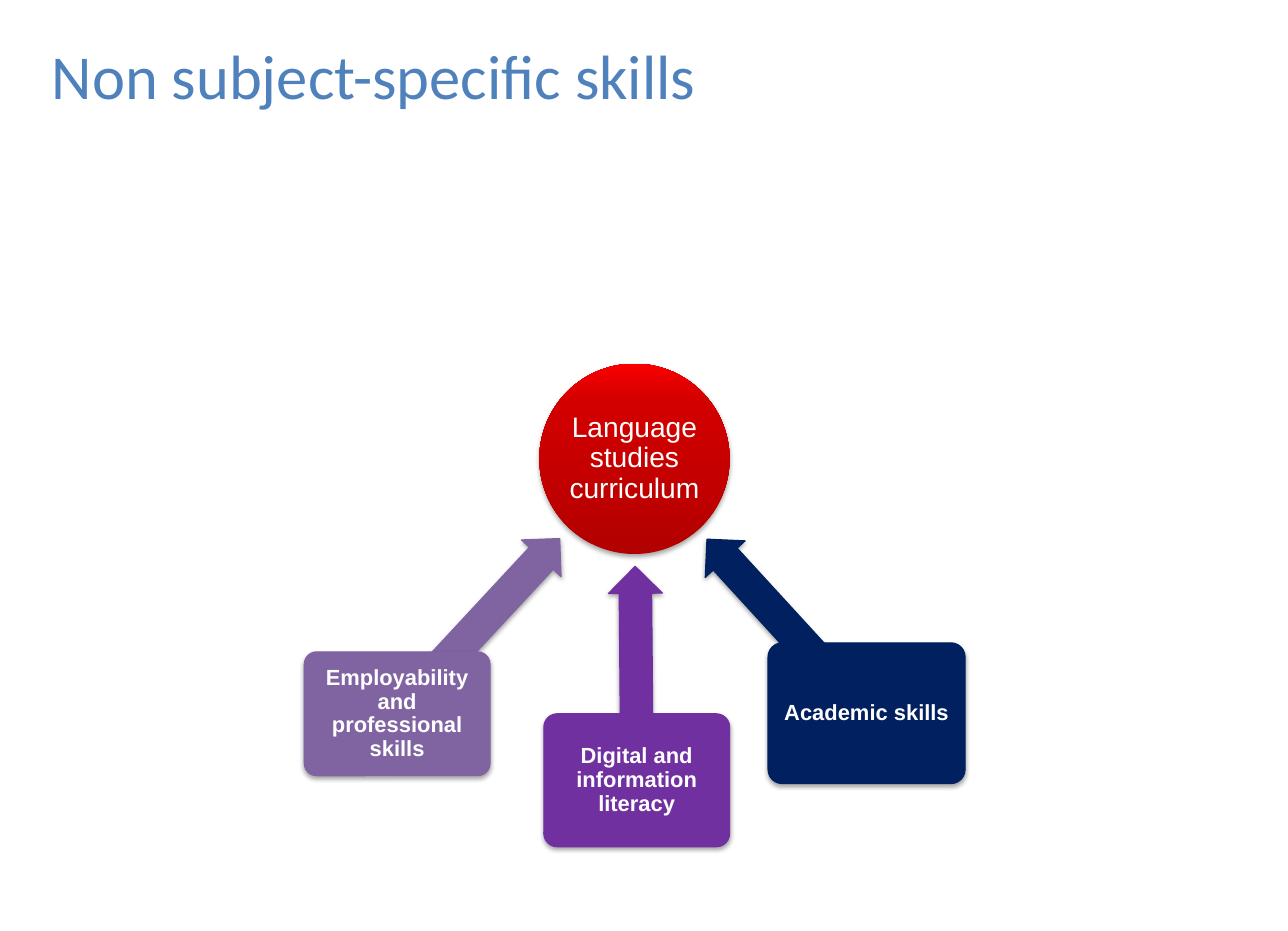
"""Build a slide showing three skill areas that feed the language studies curriculum."""
import copy

import lxml.etree
import pptx
import pptx.dml.color
import pptx.enum.shapes
import pptx.enum.text
import pptx.oxml
import pptx.oxml.ns
import pptx.util

Pt = pptx.util.Pt
RGBColor = pptx.dml.color.RGBColor
SHAPE = pptx.enum.shapes.MSO_SHAPE
ALIGN = pptx.enum.text.PP_ALIGN
MIDDLE = pptx.enum.text.MSO_ANCHOR.MIDDLE
qn = pptx.oxml.ns.qn

TITLE_BLUE = RGBColor(0x4F, 0x81, 0xBD)
WHITE = RGBColor(0xFF, 0xFF, 0xFF)
DARK_RED = RGBColor(0xB3, 0x00, 0x00)
MID_RED = RGBColor(0xD3, 0x00, 0x00)
BRIGHT_RED = RGBColor(0xF8, 0x00, 0x00)
PURPLE = RGBColor(0x70, 0x30, 0xA0)
LILAC = RGBColor(0x80, 0x64, 0xA2)
NAVY = RGBColor(0x00, 0x20, 0x60)

SHADOW = (
    f'<a:outerShdw {pptx.oxml.ns.nsdecls("a")} blurRad="{Pt(3.1)}" dist="{Pt(1.8)}" '
    'dir="5400000" rotWithShape="0"><a:srgbClr val="000000">'
    '<a:alpha val="35000"/></a:srgbClr></a:outerShdw>'
)


def add_shadowed(kind, left, top, width, height, color=None):
    shape = slide.shapes.add_shape(kind, Pt(left), Pt(top), Pt(width), Pt(height))
    if color is None:
        shape.line.fill.background()
    else:
        shape.fill.solid()
        shape.fill.fore_color.rgb = color
        shape.line.color.rgb = color
        shape.line.width = Pt(0.75)
    shape.shadow.inherit = False
    effects = shape.element.spPr.find(qn("a:effectLst"))
    effects.append(pptx.oxml.parse_xml(SHADOW))
    return shape


def write_label(shape, text, size, bold, inset):
    frame = shape.text_frame
    frame.word_wrap = True
    frame.vertical_anchor = MIDDLE
    frame.margin_left = frame.margin_right = Pt(inset)
    frame.margin_top = frame.margin_bottom = Pt(inset)
    frame.text = text
    paragraph = frame.paragraphs[0]
    paragraph.alignment = ALIGN.CENTER
    paragraph.line_spacing = 0.9
    paragraph.font.name = "Arial"
    paragraph.font.size = Pt(size)
    paragraph.font.bold = bold
    paragraph.font.color.rgb = WHITE


deck = pptx.Presentation()
deck.slide_width, deck.slide_height = Pt(823.7), Pt(595.4)
slide = deck.slides.add_slide(deck.slide_layouts[5])

title = slide.shapes.title
title.left, title.top, title.width, title.height = Pt(25.9), Pt(20.2), Pt(741), Pt(54.7)
title.text_frame.text = "Non subject-specific skills"
title.text_frame.vertical_anchor = MIDDLE
title.text_frame.auto_size = pptx.enum.text.MSO_AUTO_SIZE.SHAPE_TO_FIT_TEXT
heading = title.text_frame.paragraphs[0]
heading.alignment = ALIGN.LEFT
heading.font.name = "Calibri"
heading.font.size = Pt(40)
heading.font.color.rgb = TITLE_BLUE

curriculum = add_shadowed(SHAPE.OVAL, 344.9, 232.6, 121.7, 121.7)
curriculum.fill.gradient()
curriculum.fill.gradient_angle = 90
stop_list = curriculum.element.spPr.find(qn("a:gradFill")).find(qn("a:gsLst"))
stop_list.append(copy.deepcopy(stop_list[0]))
reds = [(0, DARK_RED), (0.8, MID_RED), (1, BRIGHT_RED)]
for stop, (position, red) in zip(curriculum.fill.gradient_stops, reds):
    stop.position = position
    stop.color.rgb = red
write_label(curriculum, "Language studies curriculum", 18, False, 0.7)

skills = [
    ("Digital and information literacy", PURPLE,
     (338.4, 413.3, 136.8, 34.6), 89.5, (347.8, 456.5, 118.8, 85)),
    ("Employability and professional skills", LILAC,
     (229.7, 383, 152.6, 34.6), 132.9, (194.6, 416.9, 118.8, 79.2)),
    ("Academic skills", NAVY,
     (427.7, 383, 150.5, 34.6), 47.5, (491.2, 411.1, 126, 90)),
]
for skill, color, arrow_place, angle, box_place in skills:
    arrow = add_shadowed(SHAPE.LEFT_ARROW, *arrow_place, color)
    arrow.adjustments[0] = 0.6
    arrow.adjustments[1] = 0.5
    arrow.rotation = angle
    box = add_shadowed(SHAPE.ROUNDED_RECTANGLE, *box_place, color)
    box.adjustments[0] = 0.1
    write_label(box, skill, 14, True, 2.2)

deck.save("out.pptx")
